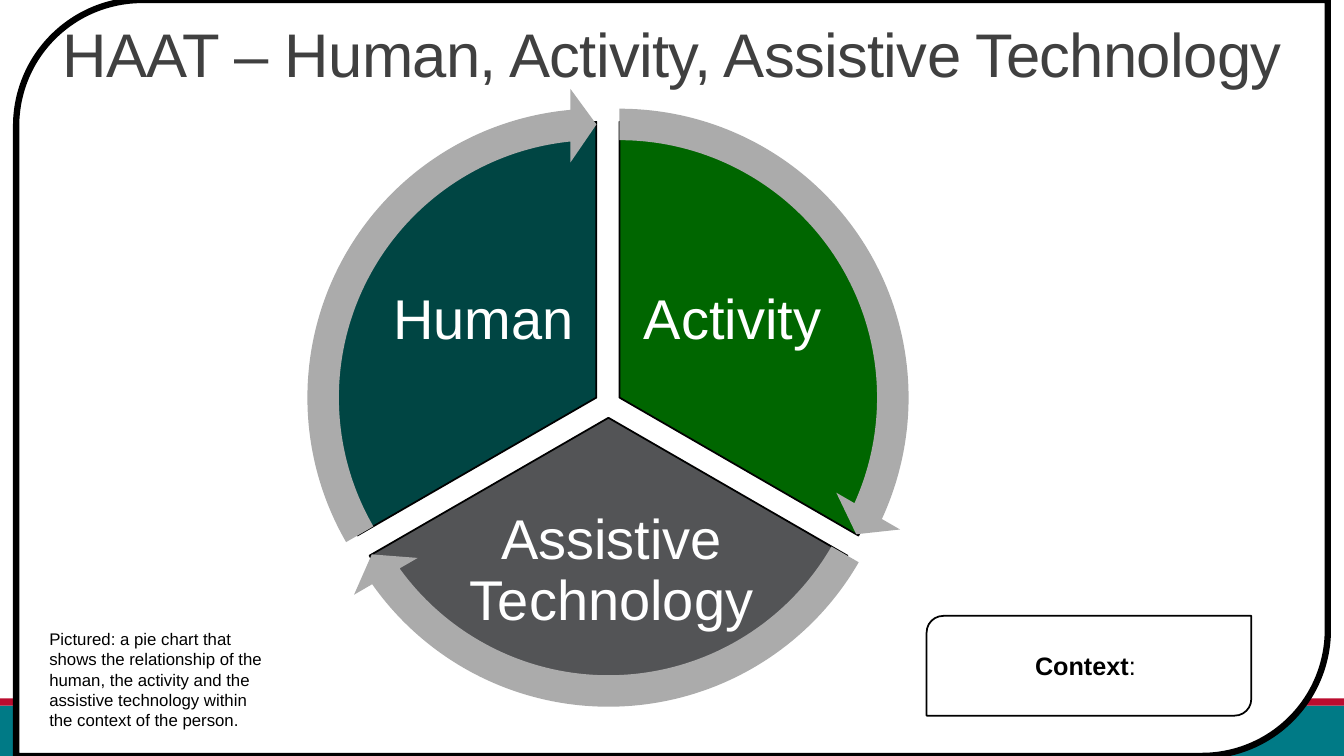
import pptx
import pptx.util
from pptx.dml.color import RGBColor
from pptx.enum.shapes import MSO_SHAPE
from pptx.enum.text import MSO_ANCHOR, MSO_AUTO_SIZE, PP_ALIGN

Inches, Pt = pptx.util.Inches, pptx.util.Pt

# Colours
WHITE = RGBColor(0xFF, 0xFF, 0xFF)
BLACK = RGBColor(0x00, 0x00, 0x00)
TITLE_GRAY = RGBColor(0x40, 0x40, 0x40)
ARROW_GRAY = RGBColor(0xAB, 0xAB, 0xAB)
TEAL = RGBColor(0x00, 0x7A, 0x86)
RED = RGBColor(0xBA, 0x0C, 0x2F)
GREEN = RGBColor(0x00, 0x66, 0x00)
SLATE = RGBColor(0x53, 0x54, 0x56)
DARK_TEAL = RGBColor(0x00, 0x45, 0x43)

# Content
FONT = "Arial"
TITLE = "HAAT – Human, Activity, Assistive Technology"
CAPTION = ("Pictured: a pie chart that shows the relationship of the human, "
           "the activity and the assistive technology within the context of the person.")
CONTEXT = [("Context", True), (": ", False)]

# Label, colour, pie left and top, pie angles, arrow angles, label box.
# Angles are in units of 100000/60000 degree, as adjustments store them.
SECTORS = [
    ("Activity", GREEN, (3.41, 1.21), (162, 18), (14.72, 161.99), (6.29, 2.37, 1.95, 1.63)),
    ("Assistive Technology", SLATE, (3.3, 1.41), (18, 90), (86.72, 18), (4.6, 4.96, 2.93, 1.43)),
    ("Human", DARK_TEAL, (3.18, 1.21), (90, 162), (158.73, 90), (3.82, 2.37, 1.95, 1.63)),
]
PIE_SIZE = 5.47
ARROW_SIZE = 6.15
ARROW_OFFSET = (PIE_SIZE - ARROW_SIZE) / 2
ARROW_WIDTH, ARROW_HEAD_ANGLE, ARROW_HEAD = 0.0508, 3.28, 0.0593

prs = pptx.Presentation()
prs.slide_width, prs.slide_height = Inches(13.33), Inches(7.5)
s = prs.slides.add_slide(prs.slide_layouts[6])


def add_shape(kind, box, fill, line_width=None, adjustments=()):
    sp = s.shapes.add_shape(kind, *map(Inches, box))
    sp.shadow.inherit = False
    sp.fill.solid()
    sp.fill.fore_color.rgb = fill
    if line_width:
        sp.line.color.rgb = BLACK
        sp.line.width = Pt(line_width)
    else:
        sp.line.fill.background()
    for i, value in enumerate(adjustments):
        sp.adjustments[i] = value
    return sp


def write(sp, runs, size, color, align, anchor, line_spacing=None, margin=None):
    tf = sp.text_frame
    tf.word_wrap = True
    tf.vertical_anchor = anchor
    if margin is not None:
        tf.margin_left = tf.margin_right = tf.margin_top = tf.margin_bottom = Inches(margin)
    p = tf.paragraphs[0]
    p.alignment = align
    p.line_spacing = line_spacing
    p.font.name, p.font.size = FONT, Pt(size)
    p.font.color.rgb = color
    for text, bold in runs:
        r = p.add_run()
        r.text = text
        r.font.bold = bold
    return tf


def add_text(box, text, *style, **options):
    sp = s.shapes.add_textbox(*map(Inches, box))
    return write(sp, [(text, None)], *style, **options)


# Footer bands and page frame
add_shape(MSO_SHAPE.RECTANGLE, (0, 7, 13.33, 0.5), TEAL)
add_shape(MSO_SHAPE.RECTANGLE, (0, 6.93, 13.33, 0.07), RED)
add_shape(MSO_SHAPE.ROUND_2_DIAG_RECTANGLE, (0.16, 0, 13.01, 7.5), WHITE, 4.5)

# Title, with slightly tightened letters
tf = add_text((0.52, 0.2, 12.32, 0.74), TITLE, 44, TITLE_GRAY,
              PP_ALIGN.LEFT, MSO_ANCHOR.BOTTOM, line_spacing=0.85)
tf.paragraphs[0].runs[0].font._element.set("spc", "-50")

# Pie sectors with labels
for label, color, (left, top), angles, _, label_box in SECTORS:
    add_shape(MSO_SHAPE.PIE, (left, top, PIE_SIZE, PIE_SIZE), color, 1.25, angles)
    add_text(label_box, label, 40, WHITE, PP_ALIGN.CENTER, MSO_ANCHOR.MIDDLE,
             line_spacing=0.9, margin=0.06)

# Arrows around the sectors
for _, _, (left, top), _, (end, start), _ in SECTORS:
    add_shape(MSO_SHAPE.CIRCULAR_ARROW,
              (left + ARROW_OFFSET, top + ARROW_OFFSET, ARROW_SIZE, ARROW_SIZE), ARROW_GRAY,
              adjustments=(ARROW_WIDTH, ARROW_HEAD_ANGLE, end, start, ARROW_HEAD))

# Caption and context box
tf = add_text((0.39, 6.19, 2.38, 1.11), CAPTION, 12, BLACK, PP_ALIGN.LEFT, MSO_ANCHOR.TOP)
tf.auto_size = MSO_AUTO_SIZE.SHAPE_TO_FIT_TEXT
context = add_shape(MSO_SHAPE.ROUND_2_DIAG_RECTANGLE, (9.19, 6.11, 3.22, 0.99), WHITE, 1.25)
write(context, CONTEXT, 18, BLACK, PP_ALIGN.CENTER, MSO_ANCHOR.MIDDLE)

prs.save("out.pptx")
